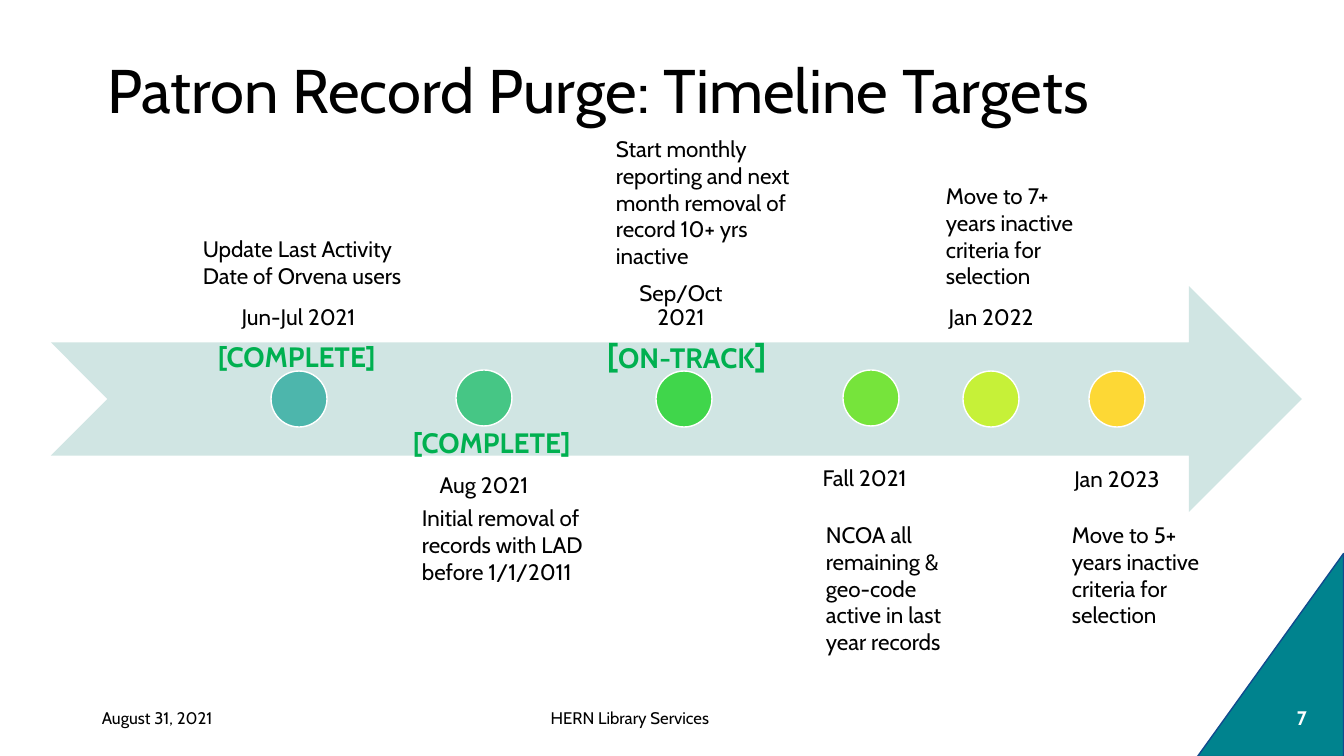
from pptx import Presentation
from pptx.dml.color import RGBColor
from pptx.enum.shapes import MSO_SHAPE
from pptx.enum.text import MSO_ANCHOR, MSO_AUTO_SIZE, PP_ALIGN
from pptx.util import Emu, Pt

LEFT, CENTER = PP_ALIGN.LEFT, PP_ALIGN.CENTER
TOP, MIDDLE, BOTTOM = MSO_ANCHOR.TOP, MSO_ANCHOR.MIDDLE, MSO_ANCHOR.BOTTOM
GROW, FIXED = MSO_AUTO_SIZE.SHAPE_TO_FIT_TEXT, MSO_AUTO_SIZE.NONE
ARROW, DOT = MSO_SHAPE.NOTCHED_RIGHT_ARROW, MSO_SHAPE.OVAL
CORNER = MSO_SHAPE.RIGHT_TRIANGLE

FONT = "Cabin"
BLACK = RGBColor(0x00, 0x00, 0x00)
WHITE = RGBColor(0xFF, 0xFF, 0xFF)
GREEN = RGBColor(0x00, 0xB0, 0x50)
PALE = RGBColor(0xD0, 0xE5, 0xE3)
TEAL = RGBColor(0x00, 0x83, 0x8E)
NAVY = RGBColor(0x10, 0x4B, 0x8E)

DOT_SIZE = 56
INSET = 12

# left, top, fill
DOTS = [
    (271, 371, RGBColor(0x4D, 0xB6, 0xAC)),
    (456, 370, RGBColor(0x46, 0xC6, 0x85)),
    (656, 371, RGBColor(0x40, 0xD6, 0x4B)),
    (843, 370, RGBColor(0x76, 0xE4, 0x3B)),
    (963, 371, RGBColor(0xC6, 0xF1, 0x38)),
    (1089, 371, RGBColor(0xFD, 0xD8, 0x35)),
]
# text, box, anchor
DATES = [
    ("Jun-Jul 2021", (51, 116, 495, 226), BOTTOM),
    ("Aug 2021", (424, 462, 120, 103), TOP),
    ("Sep/Oct 2021", (621, 116, 120, 226), BOTTOM),
    ("Fall 2021", (804, 455, 121, 92), TOP),
    ("Jan 2022", (931, 116, 120, 226), BOTTOM),
    ("Jan 2023", (1057, 456, 120, 226), TOP),
]
TASKS = [
    ("Initial removal of records with LAD before 1/1/2011",
     (412, 499, 233, 122)),
    ("Start monthly reporting and next month removal of record 10+ yrs "
     "inactive", (606, 130, 196, 146)),
    ("NCOA all remaining & geo-code active in last year records",
     (816, 516, 167, 146)),
    ("Move to 7+ years inactive criteria for selection",
     (936, 177, 158, 119)),
    ("Move to 5+ years inactive criteria for selection",
     (1062, 516, 158, 119)),
    ("Update Last Activity Date of Orvena users", (193, 230, 222, 65)),
]
# runs of text and size, box
STATES = [
    ([("[COMPLETE]", 20)], (208, 335, 250, 44)),
    ([("[", 24), ("ON-TRACK", 20), ("]", 24)], (597, 330, 250, 50)),
    ([("[COMPLETE]", 20)], (403, 421, 218, 44)),
]
# text, size, colour, bold, alignment, box
FOOTER = [
    ("HERN Library Services", 12, BLACK, False, CENTER, (403, 698, 454, 40)),
    ("7", 14, WHITE, True, CENTER, (1273, 698, 58, 40)),
    ("August 31, 2021", 12, BLACK, False, LEFT, (92, 698, 302, 40)),
]


def px(num):
    return Emu(round(num * 914400 / 100.8))


def add_form(slide, kind, box, fill, line=None):
    form = slide.shapes.add_shape(kind, *map(px, box))
    form.shadow.inherit = False
    form.fill.solid()
    form.fill.fore_color.rgb = fill
    if line is None:
        form.line.fill.background()
    else:
        form.line.color.rgb = line
        form.line.width = Pt(1)
    return form


def write(frame, runs, color=BLACK, bold=False, align=LEFT, anchor=TOP,
          fit=FIXED, spacing=None):
    """Fill a text frame with one paragraph of (text, size) runs."""
    frame.word_wrap = True
    frame.auto_size = fit
    frame.vertical_anchor = anchor
    para = frame.paragraphs[0]
    para.alignment = align
    if spacing:
        para.line_spacing = spacing
    for text, size in runs:
        run = para.add_run()
        run.text = text
        run.font.name = FONT
        run.font.size = Pt(size)
        run.font.bold = bold
        run.font.color.rgb = color


def add_text(slide, box, runs, **style):
    frame = slide.shapes.add_textbox(*map(px, box)).text_frame
    write(frame, runs, **style)
    return frame


def add_date(slide, text, box, anchor):
    frame = add_text(slide, box, [(text, 16)], align=CENTER, anchor=anchor,
                     spacing=0.9)
    frame.margin_left = frame.margin_right = px(INSET)
    frame.margin_top = frame.margin_bottom = px(INSET)


def add_title(slide, text):
    title = slide.shapes.title
    title.left, title.top, title.width, title.height = map(
        px, (97, 21, 1159, 146))
    write(title.text_frame, [(text, 44)], anchor=MIDDLE, spacing=0.9)


def main():
    deck = Presentation()
    deck.slide_width, deck.slide_height = px(1344), px(756)
    slide = deck.slides.add_slide(deck.slide_layouts[5])

    corner = add_form(slide, CORNER, (1169, 582, 203, 146), TEAL, NAVY)
    corner.rotation = 270
    add_form(slide, ARROW, (51, 286, 1251, 226), PALE)
    for left, top, fill in DOTS:
        add_form(slide, DOT, (left, top, DOT_SIZE, DOT_SIZE), fill, WHITE)
    for text, box, anchor in DATES:
        add_date(slide, text, box, anchor)

    add_title(slide, "Patron Record Purge: Timeline Targets")
    for text, size, color, bold, align, box in FOOTER:
        add_text(slide, box, [(text, size)], color=color, bold=bold,
                 align=align, anchor=MIDDLE)
    for text, box in TASKS:
        add_text(slide, box, [(text, 16)], fit=GROW)
    for runs, box in STATES:
        add_text(slide, box, runs, color=GREEN, bold=True, fit=GROW)

    deck.save("out.pptx")


if __name__ == "__main__":
    main()
